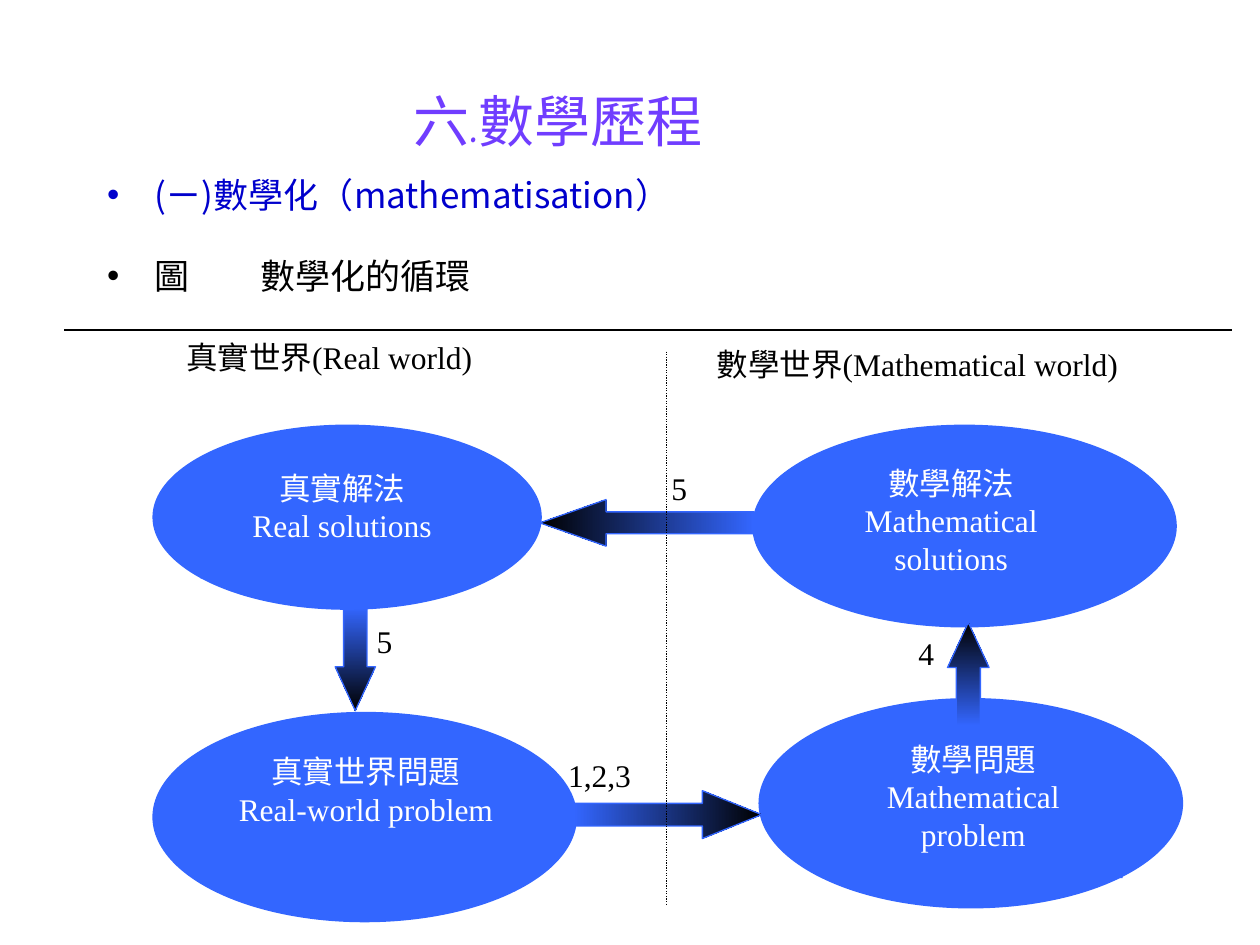
from dataclasses import dataclass

import pptx
import pptx.dml.color
import pptx.enum.dml
import pptx.enum.shapes
import pptx.enum.text
import pptx.oxml.ns
import pptx.util
from lxml import etree
from pptx.util import Inches

SHAPES = pptx.enum.shapes.MSO_SHAPE
ALIGN = pptx.enum.text.PP_ALIGN
ANCHOR = pptx.enum.text.MSO_ANCHOR
qn = pptx.oxml.ns.qn


@dataclass(frozen=True)
class Theme:
    blue: str = "3366FF"
    black: str = "000000"
    white: str = "FFFFFF"
    title: str = "703DFF"
    heading: str = "0000CC"
    title_font: str = "Comic Neue"
    body_font: str = "Noto Sans CJK JP"
    diagram_font: str = "Times New Roman"
    title_size: int = 32
    body_size: int = 20
    diagram_size: int = 18
    line_width: float = 0.75


@dataclass(frozen=True)
class Box:
    left: float
    top: float
    width: float
    height: float

    def lengths(self) -> tuple:
        return tuple(Inches(v) for v in (self.left, self.top, self.width, self.height))


@dataclass(frozen=True)
class Stage:
    ellipse: Box
    label: Box
    lines: tuple


@dataclass(frozen=True)
class Arrow:
    box: Box
    rotation: int
    shaft: float
    head: float


@dataclass(frozen=True)
class Caption:
    box: Box
    text: str


THEME = Theme()

REAL_SOLUTION_ARROW = Arrow(Box(2.66, 4.82, 0.32, 0.82), 0, 0.578, 1.088)
TO_REAL_ARROW = Arrow(Box(4.95, 3.3, 0.37, 1.7), 90, 0.47, 1.419)
TO_MATH_ARROW = Arrow(Box(5.11, 5.72, 0.38, 1.49), 270, 0.47, 1.239)
MATH_SOLUTION_ARROW = Arrow(Box(7.52, 4.94, 0.33, 0.82), 180, 0.578, 1.084)

STAGES = (
    Stage(Box(5.97, 3.37, 3.37, 1.61), Box(6.47, 3.63, 2.16, 1.09),
          ("數學解法", "Mathematical solutions")),
    Stage(Box(6.02, 5.54, 3.37, 1.67), Box(6.54, 5.82, 2.37, 1.15),
          ("數學問題", "Mathematical problem")),
    Stage(Box(1.21, 3.37, 3.09, 1.47), Box(1.59, 3.67, 2.25, 0.92),
          ("真實解法", "Real solutions")),
    Stage(Box(1.21, 5.65, 3.37, 1.67), Box(1.72, 5.92, 2.37, 1.15),
          ("真實世界問題", "Real-world problem")),
)
WORLDS = (
    Caption(Box(1.38, 2.63, 3.37, 0.59), "真實世界(Real world)"),
    Caption(Box(5.59, 2.69, 3.93, 0.59), "數學世界(Mathematical world)"),
)
STEPS = (
    Caption(Box(2.89, 4.89, 0.42, 0.63), "5"),
    Caption(Box(5.23, 3.67, 0.42, 0.63), "5"),
    Caption(Box(7.19, 4.98, 0.42, 0.63), "4"),
    Caption(Box(4.41, 5.95, 0.98, 0.63), "1,2,3"),
)


def rgb(value: str) -> pptx.dml.color.RGBColor:
    return pptx.dml.color.RGBColor.from_string(value)


def write(paragraph, text: str, *, color: str = THEME.black, align=ALIGN.LEFT,
          font: str = THEME.diagram_font, size: int = THEME.diagram_size) -> None:
    paragraph.alignment = align
    run = paragraph.add_run()
    run.text = text
    run.font.name = font
    run.font.size = pptx.util.Pt(size)
    run.font.color.rgb = rgb(color)
    # East Asian characters use the same sans face throughout
    latin = run.font._element.find(qn("a:latin"))
    east_asian = etree.Element(qn("a:ea"), typeface=THEME.body_font)
    latin.addnext(east_asian)


def place(shape, box: Box) -> None:
    shape.left, shape.top, shape.width, shape.height = box.lengths()


def add_solid(slide, kind, box: Box, color: str):
    shape = slide.shapes.add_shape(kind, *box.lengths())
    shape.shadow.inherit = False
    shape.fill.solid()
    shape.fill.fore_color.rgb = rgb(color)
    shape.line.fill.background()
    return shape


def add_lines(shape, lines: tuple, color: str, align) -> None:
    frame = shape.text_frame
    frame.word_wrap = True
    frame.vertical_anchor = ANCHOR.TOP
    for index, line in enumerate(lines):
        paragraph = frame.add_paragraph() if index else frame.paragraphs[0]
        write(paragraph, line, color=color, align=align)


def add_stage(slide, stage: Stage) -> None:
    add_solid(slide, SHAPES.OVAL, stage.ellipse, THEME.blue)
    label = add_solid(slide, SHAPES.RECTANGLE, stage.label, THEME.blue)
    add_lines(label, stage.lines, THEME.white, ALIGN.CENTER)


def add_arrow(slide, arrow: Arrow) -> None:
    shape = slide.shapes.add_shape(SHAPES.DOWN_ARROW, *arrow.box.lengths())
    shape.shadow.inherit = False
    shape.rotation = arrow.rotation
    shape.adjustments[0] = arrow.shaft
    shape.adjustments[1] = arrow.head
    shape.fill.gradient()
    shape.fill.gradient_angle = 270
    for stop, color in zip(shape.fill.gradient_stops, (THEME.blue, THEME.black)):
        stop.color.rgb = rgb(color)
    shape.line.color.rgb = rgb(THEME.blue)
    shape.line.width = pptx.util.Pt(THEME.line_width)


def add_rule(slide, start: tuple, end: tuple, dash=None) -> None:
    connector = slide.shapes.add_connector(
        pptx.enum.shapes.MSO_CONNECTOR.STRAIGHT,
        *(Inches(value) for value in start + end))
    connector.line.color.rgb = rgb(THEME.black)
    connector.line.width = pptx.util.Pt(THEME.line_width)
    if dash is not None:
        connector.line.dash_style = dash
    etree.SubElement(connector._element.spPr, qn("a:effectLst"))


def add_bullet(paragraph, text: str, color: str) -> None:
    properties = paragraph._p.get_or_add_pPr()
    properties.set("marL", str(Inches(0.38)))
    properties.set("indent", str(-Inches(0.38)))
    etree.SubElement(properties, qn("a:buChar"), char="•")
    paragraph.line_spacing = 0.8
    paragraph.space_before = pptx.util.Pt(0)
    write(paragraph, text, color=color, font=THEME.body_font, size=THEME.body_size)


def main() -> None:
    presentation = pptx.Presentation()
    presentation.slide_width, presentation.slide_height = Inches(10), Inches(7.5)
    slide = presentation.slides.add_slide(presentation.slide_layouts[1])

    # Title and bullet list
    title, body = slide.shapes.title, slide.placeholders[1]
    place(title, Box(0.75, 0.17, 7.51, 1.14))
    title.text_frame.vertical_anchor = ANCHOR.BOTTOM
    title.text_frame.margin_right = Inches(0.25)
    title.text_frame.margin_bottom = Inches(0.09)
    write(title.text_frame.paragraphs[0], "六.數學歷程", color=THEME.title,
          align=ALIGN.CENTER, font=THEME.title_font, size=THEME.title_size)
    place(body, Box(0.75, 1.39, 8.42, 2.54))
    add_bullet(body.text_frame.paragraphs[0], "(ㄧ)數學化（mathematisation）", THEME.heading)
    figure_name = body.text_frame.add_paragraph()
    add_bullet(figure_name, "圖\u3000\u3000數學化的循環".replace("\u3000", "　"), THEME.black)
    figure_name.space_before = pptx.util.Pt(27)

    # Cycle: two arrows lie behind the stages, two in front
    for arrow in (REAL_SOLUTION_ARROW, TO_REAL_ARROW):
        add_arrow(slide, arrow)
    for stage in STAGES:
        add_stage(slide, stage)
    for arrow in (TO_MATH_ARROW, MATH_SOLUTION_ARROW):
        add_arrow(slide, arrow)

    # World headings and step numbers
    for world in WORLDS:
        heading = add_solid(slide, SHAPES.RECTANGLE, world.box, THEME.white)
        add_lines(heading, (world.text,), THEME.black, ALIGN.LEFT)
    for step in STEPS:
        number = slide.shapes.add_textbox(*step.box.lengths())
        add_lines(number, (step.text,), THEME.black, ALIGN.LEFT)

    # Dividing lines
    add_rule(slide, (5.29, 2.79), (5.29, 7.19), pptx.enum.dml.MSO_LINE.ROUND_DOT)
    add_rule(slide, (0.51, 2.62), (9.78, 2.62))

    presentation.save("out.pptx")


if __name__ == "__main__":
    main()
